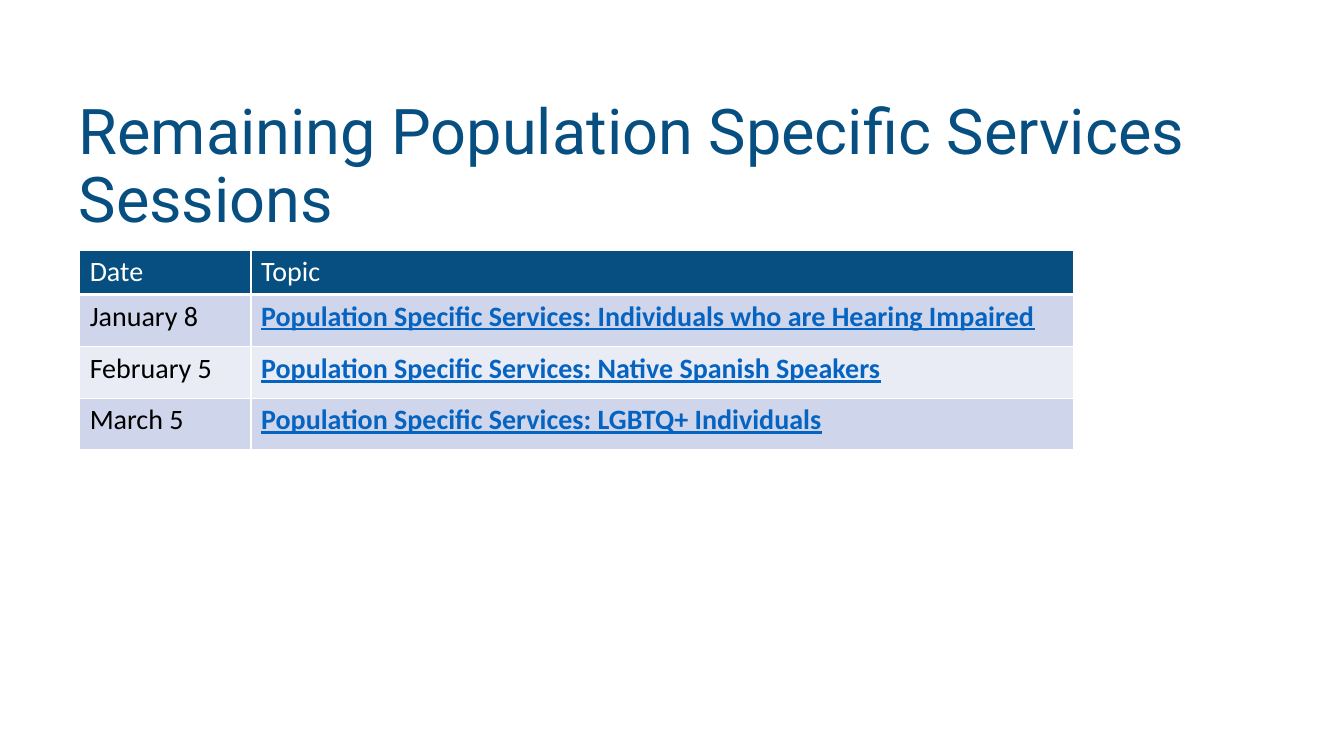
from dataclasses import dataclass

import pptx
import pptx.dml.color
import pptx.enum.text
import pptx.oxml
import pptx.oxml.ns
import pptx.slide
import pptx.table
import pptx.text.text
import pptx.util

Inches = pptx.util.Inches


@dataclass(frozen=True)
class Theme:
    navy: str = "064F80"
    white: str = "FFFFFF"
    black: str = "000000"
    link: str = "0563C1"
    bands: tuple[str, str] = ("CFD5EA", "E9EBF5")
    title_font: str = "Roboto"
    table_font: str = "Calibri"
    title_size: int = 45
    table_size: int = 20


@dataclass(frozen=True)
class Session:
    date: str
    topic: str


THEME = Theme()
TITLE = "Remaining Population Specific Services Sessions"
HEADINGS = ("Date", "Topic")
SESSIONS = [
    Session("January 8", "Population Specific Services: Individuals who are Hearing Impaired"),
    Session("February 5", "Population Specific Services: Native Spanish Speakers"),
    Session("March 5", "Population Specific Services: LGBTQ+ Individuals"),
]
COLUMN_WIDTHS = (1.7, 8.16)
ROW_HEIGHTS = (0.43, 0.52, 0.51, 0.51)


def rgb(color: str) -> pptx.dml.color.RGBColor:
    return pptx.dml.color.RGBColor.from_string(color)


def add_run(p: pptx.text.text._Paragraph, text: str, color: str, **formats: object) -> None:
    r = p.add_run()
    r.text = text
    for name, value in formats.items():
        setattr(r.font, name, value)
    r.font.color.rgb = rgb(color)


def add_title(s: pptx.slide.Slide) -> None:
    sp = s.shapes.title
    box = {"left": 0.68, "top": 1.1, "width": 12.19, "height": 1.13}
    for name, value in box.items():
        setattr(sp, name, Inches(value))
    tf = sp.text_frame
    frame = {
        "word_wrap": True,
        "auto_size": pptx.enum.text.MSO_AUTO_SIZE.NONE,
        "vertical_anchor": pptx.enum.text.MSO_ANCHOR.MIDDLE,
    }
    for name, value in frame.items():
        setattr(tf, name, value)
    p = tf.paragraphs[0]
    p.alignment = pptx.enum.text.PP_ALIGN.LEFT
    p.line_spacing = 0.9
    add_run(p, TITLE, THEME.navy, name=THEME.title_font,
            size=pptx.util.Pt(THEME.title_size), bold=False)


def add_borders(cell: pptx.table._Cell, bottom: int) -> None:
    tc_pr = cell._tc.get_or_add_tcPr()
    for side, width in {"L": 1, "R": 1, "T": 1, "B": bottom}.items():
        tc_pr.append(pptx.oxml.parse_xml(
            f'<a:ln{side} {pptx.oxml.ns.nsdecls("a")} w="{pptx.util.Pt(width)}">'
            f'<a:solidFill><a:srgbClr val="{THEME.white}"/></a:solidFill></a:ln{side}>'
        ))


def fill_cell(cell: pptx.table._Cell, text: str, fill: str, color: str,
              bottom: int = 1, link: bool = False) -> None:
    add_borders(cell, bottom)
    cell.fill.solid()
    cell.fill.fore_color.rgb = rgb(fill)
    add_run(cell.text_frame.paragraphs[0], text, color, name=THEME.table_font,
            size=pptx.util.Pt(THEME.table_size), bold=link, underline=link)


def add_sessions(s: pptx.slide.Slide) -> None:
    table = s.shapes.add_table(
        len(ROW_HEIGHTS), len(COLUMN_WIDTHS), Inches(0.79), Inches(2.48),
        Inches(sum(COLUMN_WIDTHS)), Inches(sum(ROW_HEIGHTS)),
    ).table
    for column, width in zip(table.columns, COLUMN_WIDTHS):
        column.width = Inches(width)
    for row, height in zip(table.rows, ROW_HEIGHTS):
        row.height = Inches(height)

    # Header row
    for i, heading in enumerate(HEADINGS):
        fill_cell(table.cell(0, i), heading, THEME.navy, THEME.white, bottom=3)

    # Banded session rows
    for i, session in enumerate(SESSIONS):
        band = THEME.bands[i % 2]
        fill_cell(table.cell(i + 1, 0), session.date, band, THEME.black)
        fill_cell(table.cell(i + 1, 1), session.topic, band, THEME.link, link=True)


def main() -> None:
    prs = pptx.Presentation()
    prs.slide_width = Inches(13.33)
    prs.slide_height = Inches(7.5)
    s = prs.slides.add_slide(prs.slide_layouts.get_by_name("Title Only"))
    add_title(s)
    add_sessions(s)
    prs.save("out.pptx")


if __name__ == "__main__":
    main()
